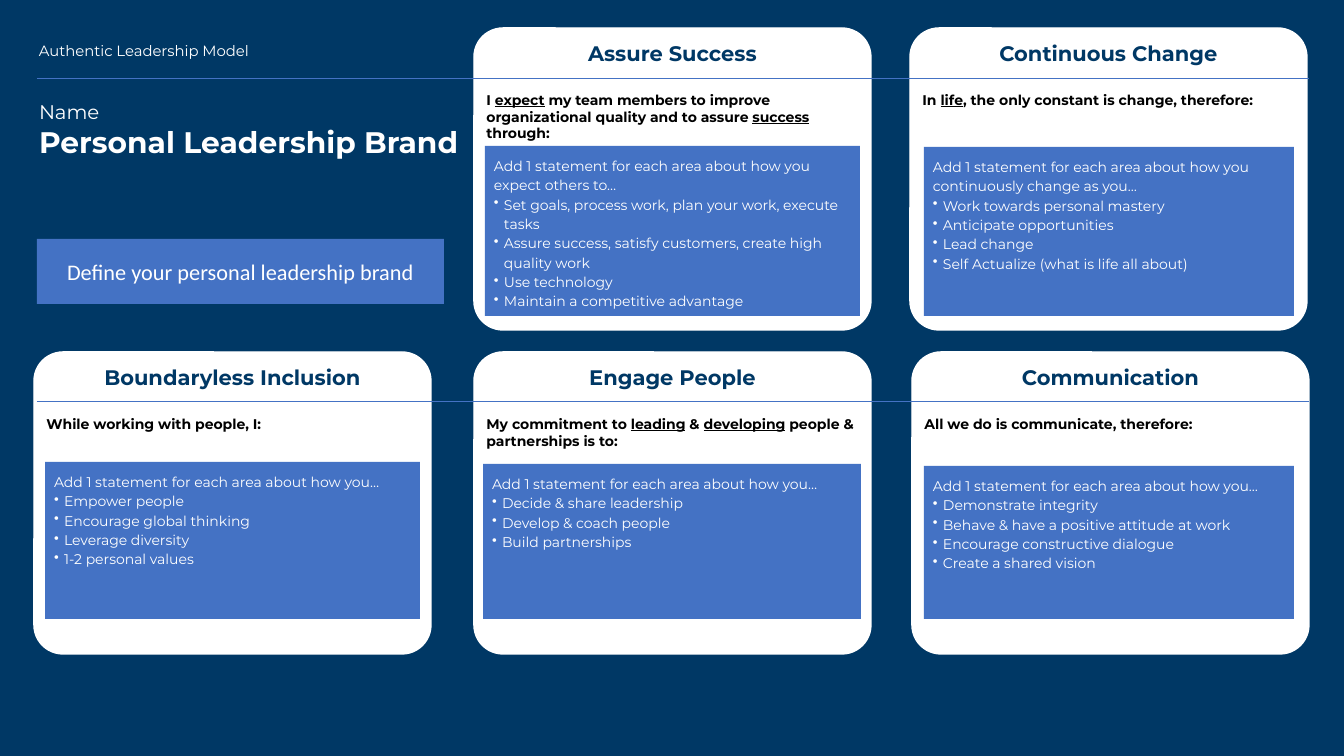
from lxml.etree import SubElement
from pptx import Presentation
from pptx.dml.color import RGBColor
from pptx.enum.shapes import MSO_CONNECTOR as Connector, MSO_SHAPE as Shape
from pptx.enum.text import MSO_ANCHOR as Anchor, PP_ALIGN as Align
from pptx.oxml.ns import qn
from pptx.util import Emu, Pt

NAVY = RGBColor(0x00, 0x38, 0x65)
BLUE = RGBColor(0x44, 0x72, 0xC4)
WHITE = RGBColor(0xFF, 0xFF, 0xFF)
BLACK = RGBColor(0x00, 0x00, 0x00)
FONT = "Montserrat"

CARD_WIDTH, CARD_HEIGHT = 397, 302
TOP_ROW, BOTTOM_ROW = 28, 352
PROMPT = "Add 1 statement for each area about how you"

CARDS = [
    ((474, TOP_ROW), "Assure Success",
     "I _expect_ my team members to improve organizational quality and to assure _success_ through:",
     (485, 146, 375, 170), PROMPT + " expect others to…",
     ["Set goals, process work, plan your work, execute tasks",
      "Assure success, satisfy customers, create high quality work",
      "Use technology", "Maintain a competitive advantage"]),
    ((474, BOTTOM_ROW), "Engage People",
     "My commitment to _leading_ & _developing_ people & partnerships is to:",
     (483, 464, 378, 155), PROMPT + "…",
     ["Decide & share leadership", "Develop & coach people", "Build partnerships"]),
    ((34, BOTTOM_ROW), "Boundaryless Inclusion",
     "While working with people, I:",
     (45, 462, 375, 157), PROMPT + "…",
     ["Empower people", "Encourage global thinking", "Leverage diversity",
      "1-2 personal values"]),
    ((912, BOTTOM_ROW), "Communication",
     "All we do is communicate, therefore:",
     (924, 466, 370, 153), PROMPT + "…",
     ["Demonstrate integrity", "Behave & have a positive attitude at work",
      "Encourage constructive dialogue", "Create a shared vision"]),
    ((910, TOP_ROW), "Continuous Change",
     "In _life_, the only constant is change, therefore:",
     (924, 147, 370, 169), PROMPT + " continuously change as you…",
     ["Work towards personal mastery", "Anticipate opportunities", "Lead change",
      "Self Actualize (what is life all about)"]),
]


def px(length):
    return Emu(round(length * 914400 / 100.8))


def add_run(paragraph, text, size, color=WHITE, bold=False, underline=False, name=FONT):
    run = paragraph.add_run()
    run.text = text
    font = run.font
    font.name, font.size, font.bold = name, Pt(size), bold
    font.underline = underline
    font.color.rgb = color


def set_frame(shape, inset_x, inset_y, anchor=Anchor.TOP):
    frame = shape.text_frame
    frame.word_wrap = True
    frame.vertical_anchor = anchor
    frame.margin_left = frame.margin_right = px(inset_x)
    frame.margin_top = frame.margin_bottom = px(inset_y)
    frame.paragraphs[0].alignment = Align.LEFT
    return frame


def add_block(slide, kind, box, color):
    shape = slide.shapes.add_shape(kind, *map(px, box))
    shape.shadow.inherit = False
    shape.fill.solid()
    shape.fill.fore_color.rgb = color
    shape.line.fill.background()
    return shape


def add_bullet(paragraph):
    properties = paragraph._p.get_or_add_pPr()
    properties.set("marL", str(px(10)))
    properties.set("indent", str(-px(10)))
    SubElement(properties, qn("a:buChar"), char="•")


def add_card(slide, corner, title, statement):
    card = add_block(slide, Shape.ROUNDED_RECTANGLE, (*corner, CARD_WIDTH, CARD_HEIGHT), WHITE)
    card.adjustments[0] = 0.096
    card.line.color.rgb = WHITE
    card.line.width = Pt(1)
    frame = set_frame(card, 4, 4)
    heading = frame.paragraphs[0]
    heading.alignment = Align.CENTER
    add_run(heading, title, 15, NAVY, bold=True)
    paragraph = frame.add_paragraph()
    paragraph.alignment = Align.LEFT
    paragraph.space_before = Pt(18.3)
    for index, text in enumerate(statement.split("_")):
        add_run(paragraph, text, 10, BLACK, bold=True, underline=index % 2 == 1)


def add_panel(slide, box, prompt, items):
    frame = set_frame(add_block(slide, Shape.RECTANGLE, box, BLUE), 9, 9)
    lead = frame.paragraphs[0]
    lead.line_spacing = 1.15
    add_run(lead, prompt, 10)
    for item in items:
        paragraph = frame.add_paragraph()
        paragraph.alignment = Align.LEFT
        paragraph.line_spacing = 1.15
        add_bullet(paragraph)
        add_run(paragraph, item, 10)


def add_label(slide, box, lines):
    frame = set_frame(slide.shapes.add_textbox(*map(px, box)), 10, 10)
    for index, (text, size, bold) in enumerate(lines):
        paragraph = frame.add_paragraph() if index else frame.paragraphs[0]
        add_run(paragraph, text, size, bold=bold)


def add_banner(slide, box, text):
    banner = add_block(slide, Shape.RECTANGLE, box, BLUE)
    paragraph = set_frame(banner, 8, 4, Anchor.MIDDLE).paragraphs[0]
    paragraph.alignment = Align.CENTER
    add_run(paragraph, text, 15.9, name="Calibri")


def add_rule(slide, left, right, y):
    rule = slide.shapes.add_connector(Connector.STRAIGHT, px(left), px(y), px(right), px(y))
    rule.line.color.rgb = BLUE
    rule.line.width = Pt(0.5)
    SubElement(rule._element.spPr, qn("a:effectLst"))


def main():
    presentation = Presentation()
    presentation.slide_width, presentation.slide_height = px(1344), px(756)
    slide = presentation.slides.add_slide(presentation.slide_layouts[6])
    slide.background.fill.solid()
    slide.background.fill.fore_color.rgb = NAVY

    for corner, title, statement, *panel in CARDS:
        add_card(slide, corner, title, statement)
    add_label(slide, (29, 90, 443, 192),
              [("Name", 14.1, False), ("Personal Leadership Brand", 21.2, True)])
    add_label(slide, (29, 33, 294, 56), [("Authentic Leadership Model", 10.6, False)])
    add_banner(slide, (37, 239, 407, 65), "Define your personal leadership brand")
    for corner, title, statement, *panel in CARDS:
        add_panel(slide, *panel)
    for y in (401, 78):
        add_rule(slide, 37, 1309, y)

    presentation.save("out.pptx")


if __name__ == "__main__":
    main()
